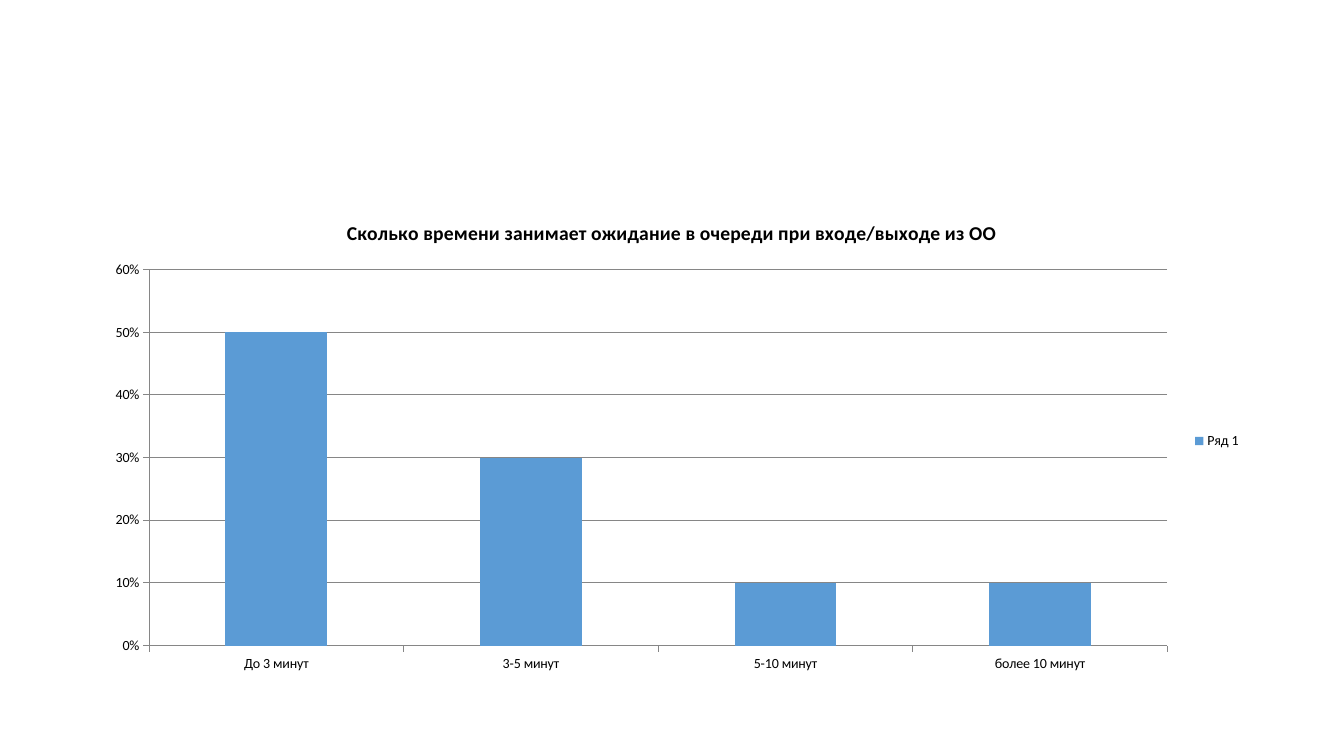
from dataclasses import dataclass

import pptx
import pptx.chart.data
import pptx.dml.color
import pptx.enum.chart
import pptx.util

Pt = pptx.util.Pt
RGB = pptx.dml.color.RGBColor.from_string


@dataclass(frozen=True)
class Theme:
    """Colours, typeface and sizes of the slide."""
    font: str = "Calibri"
    ink: str = "000000"
    bar: str = "5B9BD5"
    rule: str = "868686"
    heading_size: float = 14
    label_size: float = 10
    rule_width: float = 0.75


THEME = Theme()


def format_font(font, size=THEME.label_size, bold=False, color=THEME.ink):
    """Apply the theme typeface with the given size, weight and colour."""
    font.name = THEME.font
    font.size = Pt(size)
    font.bold = bold
    font.color.rgb = RGB(color)


def write_text(frame, text, **style):
    """Write one formatted line of text into a text frame."""
    line = frame.paragraphs[0]
    run = line.add_run()
    run.text = text
    format_font(run.font, **style)


def draw_rule(line):
    """Give an axis or gridline the theme rule."""
    line.color.rgb = RGB(THEME.rule)
    line.width = Pt(THEME.rule_width)


def add_waiting_chart(slide, left, top, width, height):
    """Place the column chart of waiting times in the given box."""
    answers = pptx.chart.data.CategoryChartData(number_format="0%")
    answers.categories = ["До 3 минут", "3-5 минут", "5-10 минут", "более 10 минут"]
    answers.add_series("Ряд 1", [0.5, 0.3, 0.1, 0.1])
    chart = slide.shapes.add_chart(
        pptx.enum.chart.XL_CHART_TYPE.COLUMN_STACKED,
        Pt(left), Pt(top), Pt(width), Pt(height), answers).chart
    format_font(chart.font)

    chart.has_title = True
    write_text(chart.chart_title.text_frame,
               "Сколько времени занимает ожидание в очереди при входе/выходе из ОО",
               size=THEME.heading_size, bold=True)
    chart.chart_title.include_in_layout = False

    chart.has_legend = True
    chart.legend.position = pptx.enum.chart.XL_LEGEND_POSITION.RIGHT
    chart.legend.include_in_layout = False
    format_font(chart.legend.font)

    columns = chart.plots[0]
    columns.gap_width = 150
    columns.overlap = 100
    columns.vary_by_categories = False
    fill = columns.series[0].format.fill
    fill.solid()
    fill.fore_color.rgb = RGB(THEME.bar)

    for axis in (chart.category_axis, chart.value_axis):
        axis.major_tick_mark = pptx.enum.chart.XL_TICK_MARK.OUTSIDE
        axis.minor_tick_mark = pptx.enum.chart.XL_TICK_MARK.NONE
        draw_rule(axis.format.line)
        format_font(axis.tick_labels.font)

    shares = chart.value_axis
    shares.minimum_scale, shares.maximum_scale, shares.major_unit = 0, 0.6, 0.1
    shares.tick_labels.number_format = "0%"
    shares.tick_labels.number_format_is_linked = False
    shares.has_major_gridlines = True
    draw_rule(shares.major_gridlines.format.line)


def main():
    """Build the slide and save it."""
    deck = pptx.Presentation()
    deck.slide_width, deck.slide_height = Pt(960), Pt(540)
    slide = deck.slides.add_slide(deck.slide_layouts.get_by_name("Blank"))
    add_waiting_chart(slide, left=66, top=143.75, width=828, height=342.6)
    deck.save("out.pptx")


if __name__ == "__main__":
    main()
